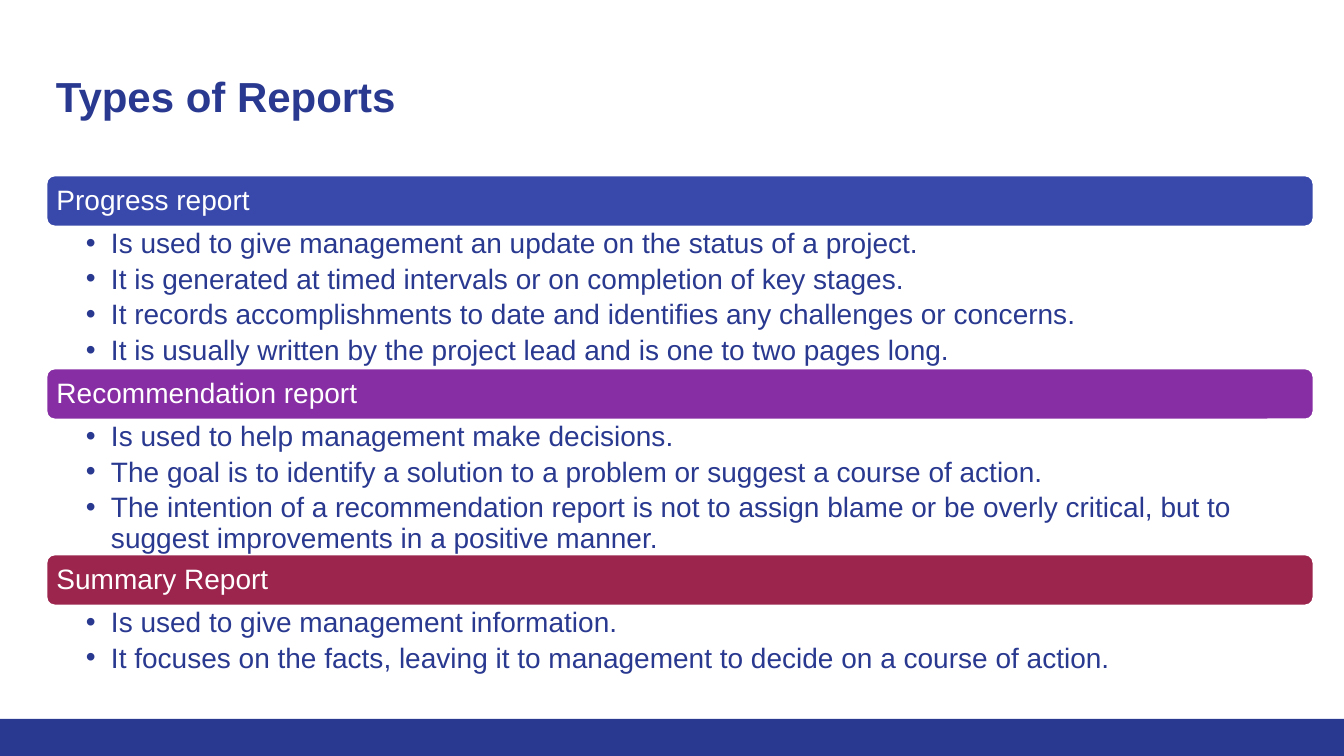
from pptx import Presentation
from pptx.dml.color import RGBColor as Rgb
from pptx.enum.shapes import MSO_SHAPE as Shape
from pptx.enum.text import MSO_ANCHOR as Anchor, MSO_AUTO_SIZE as Fit, PP_ALIGN as Align
from pptx.oxml import parse_xml
from pptx.oxml.ns import nsdecls
from pptx.util import Emu, Pt

WIDTH, HEIGHT = 1344, 756
SCALE = 12192000 / WIDTH
COLORS = {
    "navy": "2A3990",
    "blue": "3949AB",
    "purple": "882EA4",
    "red": "9C254D",
    "white": "FFFFFF",
}
REPORTS = [
    ("Progress report", "blue", 141, [
        "Is used to give management an update on the status of a project.",
        "It is generated at timed intervals or on completion of key stages.",
        "It records accomplishments to date and identifies any challenges or concerns.",
        "It is usually written by the project lead and is one to two pages long.",
    ]),
    ("Recommendation report", "purple", 134, [
        "Is used to help management make decisions.",
        "The goal is to identify a solution to a problem or suggest a course of action.",
        "The intention of a recommendation report is not to assign blame or be overly "
        "critical, but to suggest improvements in a positive manner.",
    ]),
    ("Summary Report", "red", 71, [
        "Is used to give management information.",
        "It focuses on the facts, leaving it to management to decide on a course of action.",
    ]),
]


def px(n):
    return Emu(round(n * SCALE))


def color(name):
    return Rgb.from_string(COLORS[name])


def place(shape, box):
    shape.left, shape.top, shape.width, shape.height = map(px, box)


def frame(shape, pads, anchor):
    body = shape.text_frame
    body.auto_size = Fit.NONE
    body.word_wrap = True
    body.vertical_anchor = anchor
    body.margin_left, body.margin_top, body.margin_right, body.margin_bottom = map(px, pads)
    return body


def write(para, text, size, tone, bold=False):
    para.alignment = Align.LEFT
    para.space_before = Pt(0)
    run = para.add_run()
    run.text = text
    font = run.font
    font.name, font.size, font.bold = "Arial", Pt(size), bold
    font.color.rgb = color(tone)


def add_bar(slide, kind, box, tone):
    bar = slide.shapes.add_shape(kind, *map(px, box))
    bar.shadow.inherit = False
    bar.fill.solid()
    bar.fill.fore_color.rgb = color(tone)
    bar.line.fill.background()
    return bar


def add_title(slide, box):
    title = slide.shapes.title
    place(title, box)
    body = frame(title, (10, 10, 10, 10), Anchor.TOP)
    write(body.paragraphs[0], "Types of Reports", 30, "navy", True)


def add_head(slide, box, text, tone):
    bar = add_bar(slide, Shape.ROUNDED_RECTANGLE, box, tone)
    bar.line.color.rgb = color("white")
    bar.line.width = Pt(2)
    body = frame(bar, (8, 8, 8, 8), Anchor.MIDDLE)
    para = body.paragraphs[0]
    para.line_spacing = 0.9
    write(para, text, 20, "white")


def fill_list(holder, box, items):
    place(holder, box)
    body = frame(holder, (40, 2, 16, 2), Anchor.TOP)
    for i, item in enumerate(items):
        para = body.paragraphs[0] if i == 0 else body.add_paragraph()
        para.level = 1
        para.line_spacing = 0.9
        para.space_after = Pt(4)
        write(para, item, 20, "navy")
        props = para._p.get_or_add_pPr()
        props.set("marL", str(px(25)))
        props.set("indent", str(px(-25)))
        props.append(parse_xml(f'<a:buFont {nsdecls("a")} typeface="Arial"/>'))
        props.append(parse_xml(f'<a:buChar {nsdecls("a")} char="•"/>'))


def add_reports(slide, box):
    left, top, width, head = box
    holders = [h for h in slide.placeholders if h.placeholder_format.idx > 0]
    for holder, (name, tone, height, items) in zip(holders, REPORTS):
        add_head(slide, (left, top, width, head), name, tone)
        fill_list(holder, (left, top + head, width, height), items)
        top += head + height
    for holder in holders[:len(REPORTS)]:
        slide.shapes._spTree.append(holder._element)
    for spare in holders[len(REPORTS):]:
        spare._element.getparent().remove(spare._element)


def main():
    deck = Presentation()
    deck.slide_width, deck.slide_height = px(WIDTH), px(HEIGHT)
    slide = deck.slides.add_slide(deck.slide_layouts.get_by_name("Comparison"))
    add_bar(slide, Shape.RECTANGLE, (0, 719, WIDTH, 37), "navy")
    add_title(slide, (46, 61, 1252, 90))
    add_reports(slide, (46, 175, 1268, 52))
    deck.save("out.pptx")


if __name__ == "__main__":
    main()
